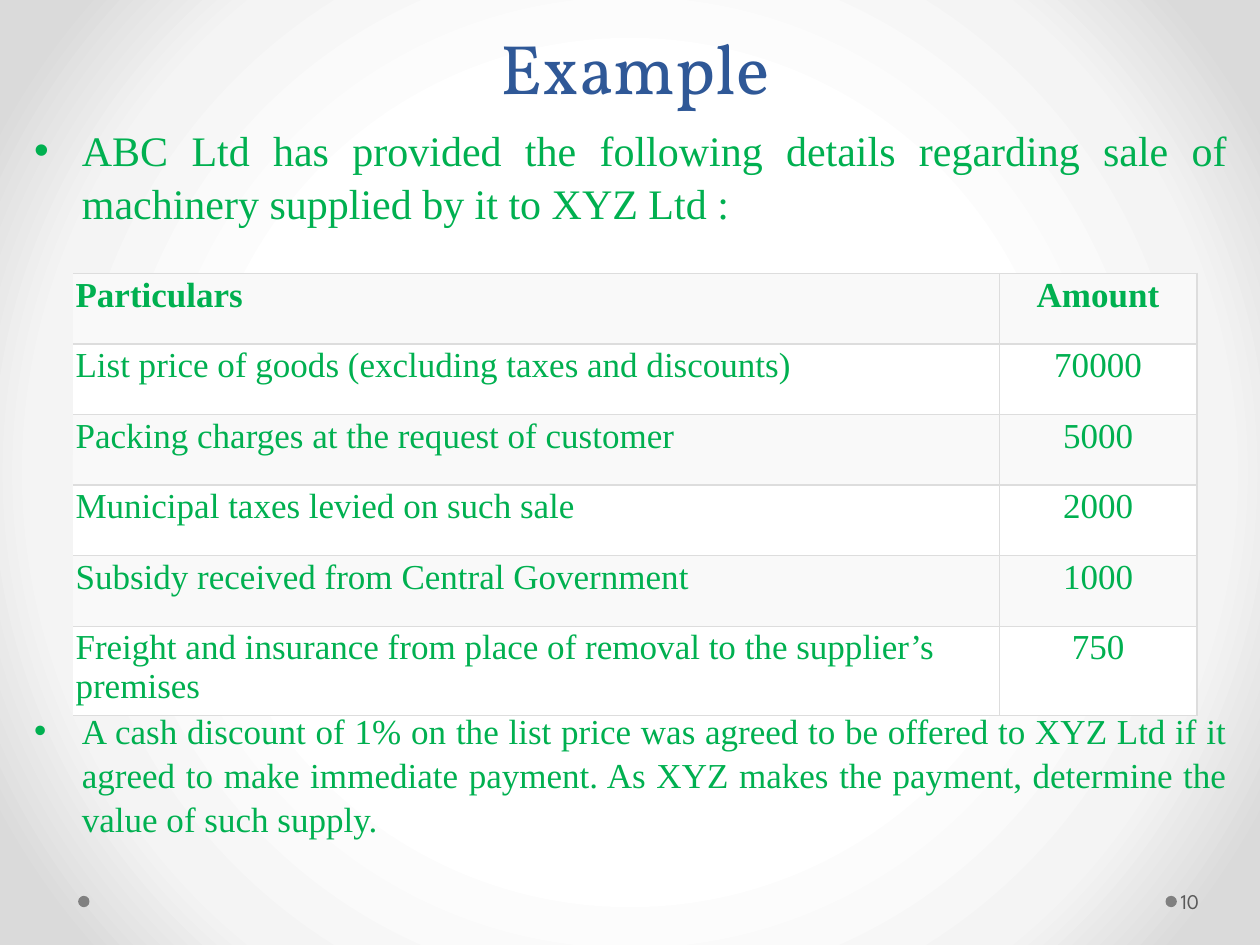
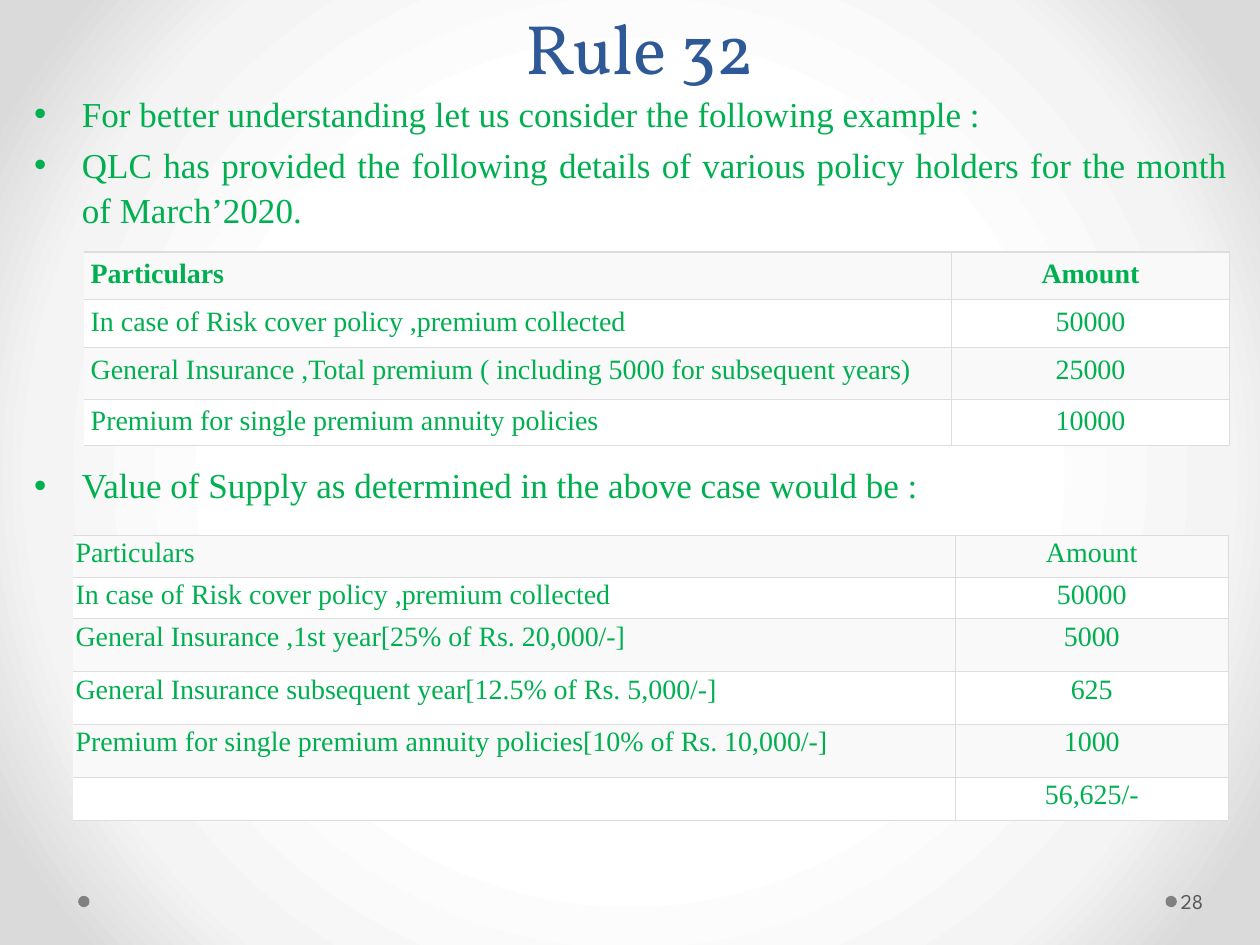
import lxml.etree
import pptx
import pptx.dml.color
import pptx.enum.dml
import pptx.enum.shapes
import pptx.enum.text
import pptx.oxml
import pptx.oxml.ns
import pptx.util

Inches = pptx.util.Inches
Pt = pptx.util.Pt
ALIGN = pptx.enum.text.PP_ALIGN
ANCHOR = pptx.enum.text.MSO_ANCHOR
NAMESPACE = pptx.oxml.ns.nsdecls("a")

BLUE, GREEN, GREY, DOT = "2F5897", "00B050", "595959", "808080"
BORDER = "DDDDDD"
BANDS = ["F9F9F9", "FFFFFF"]
BACKDROP = [(50, "FFFFFF"), (76, "F4F4F4"), (92, "DADADA")]

TITLE_FONT = {"name": "Vollkorn", "size": Pt(40)}
NUMBER_FONT = {"name": "League Spartan", "size": Pt(12)}
BODY_FACE = "Times New Roman"


def color(hex_value):
    return pptx.dml.color.RGBColor.from_string(hex_value)


def set_values(target, values):
    for name, value in values.items():
        setattr(target, name, value)


class Deck:
    """Holds the shared style and the slide being built."""

    def __init__(self):
        self.presentation = pptx.Presentation()
        set_values(self.presentation, {
            "slide_width": Inches(10), "slide_height": Inches(7.5)})
        self.slide = None
        self.set_backdrop()

    def set_backdrop(self):
        master = self.presentation.slide_master
        master.background.fill.gradient()
        old_fill = master.element.find(".//" + pptx.oxml.ns.qn("a:gradFill"))
        stops = "".join(
            f'<a:gs pos="{position * 1000}"><a:srgbClr val="{value}"/></a:gs>'
            for position, value in BACKDROP)
        new_fill = pptx.oxml.parse_xml(
            f'<a:gradFill {NAMESPACE} rotWithShape="1"><a:gsLst>{stops}</a:gsLst>'
            '<a:path path="circle"><a:fillToRect l="50000" t="50000" '
            'r="50000" b="50000"/></a:path></a:gradFill>')
        old_fill.getparent().replace(old_fill, new_fill)

    def add_slide(self, number):
        layout = self.presentation.slide_layouts[1]
        self.slide = self.presentation.slides.add_slide(layout)
        for left in (9.25, 0.62):
            self.dot(left)
        self.number(number)

    def place(self, shape, box):
        names = ("left", "top", "width", "height")
        set_values(shape, dict(zip(names, map(Inches, box))))

    def add_text(self, paragraph, text, font, text_color):
        run = paragraph.add_run()
        run.text = text
        set_values(run.font, font)
        run.font.color.rgb = color(text_color)

    def dot(self, left):
        shape = self.slide.shapes.add_shape(
            pptx.enum.shapes.MSO_SHAPE.OVAL,
            Inches(left), Inches(7.11), Inches(0.09), Inches(0.09))
        shape.shadow.inherit = False
        shape.fill.solid()
        shape.fill.fore_color.rgb = color(DOT)
        shape.line.fill.background()

    def number(self, number):
        box = self.slide.shapes.add_textbox(
            Inches(9.34), Inches(6.95), Inches(0.61), Inches(0.4))
        inset = Inches(0.05)
        set_values(box.text_frame, {
            "word_wrap": True, "vertical_anchor": ANCHOR.MIDDLE,
            "margin_left": Inches(0.03), "margin_right": inset,
            "margin_top": inset, "margin_bottom": inset})
        self.add_text(box.text_frame.paragraphs[0], str(number), NUMBER_FONT, GREY)

    def title(self, text, box):
        shape = self.slide.shapes.title
        self.place(shape, box)
        set_values(shape.text_frame, {
            "vertical_anchor": ANCHOR.BOTTOM,
            "auto_size": pptx.enum.text.MSO_AUTO_SIZE.NONE})
        paragraph = shape.text_frame.paragraphs[0]
        set_values(paragraph, {"alignment": ALIGN.CENTER, "line_spacing": Pt(58)})
        self.add_text(paragraph, text, TITLE_FONT, BLUE)

    def bullets(self, items, box):
        shape = self.slide.placeholders[1]
        self.place(shape, box)
        frame = shape.text_frame
        frame.auto_size = pptx.enum.text.MSO_AUTO_SIZE.NONE
        for index, (text, size, space_before) in enumerate(items):
            paragraph = frame.add_paragraph() if index else frame.paragraphs[0]
            set_values(paragraph, {
                "alignment": ALIGN.JUSTIFY, "line_spacing": 1.05,
                "space_before": Pt(space_before)})
            properties = paragraph._p.get_or_add_pPr()
            properties.set("marL", str(Inches(0.38)))
            properties.set("indent", str(-Inches(0.38)))
            self.add_text(paragraph, text, {"name": BODY_FACE, "size": Pt(size)}, GREEN)

    def borders(self, cell, visible):
        properties = cell._tc.get_or_add_tcPr()
        for side in "LRTB":
            line = lxml.etree.SubElement(
                properties, pptx.oxml.ns.qn(f"a:ln{side}"), w=str(Pt(0.75)))
            if side in visible:
                line.append(pptx.oxml.parse_xml(
                    f'<a:solidFill {NAMESPACE}><a:srgbClr val="{BORDER}"/></a:solidFill>'))
            else:
                lxml.etree.SubElement(line, pptx.oxml.ns.qn("a:noFill"))

    def table(self, rows, corner, widths, heights, size, inset, bold_header=True):
        left, top = corner
        table = self.slide.shapes.add_table(
            len(rows), len(widths), Inches(left), Inches(top),
            Inches(sum(widths)), Inches(sum(heights))).table
        set_values(table, {"first_row": False, "horz_banding": False})
        for column, width in zip(table.columns, widths):
            column.width = Inches(width)
        sides = ("margin_left", "margin_right", "margin_top", "margin_bottom")
        for row_index, texts in enumerate(rows):
            table.rows[row_index].height = Inches(heights[row_index])
            font = {"name": BODY_FACE, "size": Pt(size),
                    "bold": bold_header and row_index == 0}
            for column_index, text in enumerate(texts):
                cell = table.cell(row_index, column_index)
                set_values(cell, dict.fromkeys(sides, Inches(inset)))
                self.borders(cell, "LRTB" if column_index else "RTB")
                cell.fill.solid()
                cell.fill.fore_color.rgb = color(BANDS[row_index % 2])
                paragraph = cell.text_frame.paragraphs[0]
                paragraph.alignment = ALIGN.CENTER if column_index else ALIGN.LEFT
                self.add_text(paragraph, text, font, GREEN)


def build_example(deck):
    deck.add_slide(10)
    deck.title("Example", (0.25, 0.08, 9.58, 0.83))
    deck.bullets([
        ("ABC Ltd has provided the following details regarding sale of "
         "machinery supplied by it to XYZ Ltd :", 24, 4.8),
        ("A cash discount of 1% on the list price was agreed to be offered to "
         "XYZ Ltd if it agreed to make immediate payment. As XYZ makes the "
         "payment, determine the value of such supply.", 20, 274),
    ], (0.17, 0.92, 9.67, 6.17))
    deck.table([
        ("Particulars", "Amount"),
        ("List price of goods (excluding taxes and discounts)", "70000"),
        ("Packing charges at the request of customer", "5000"),
        ("Municipal taxes levied on such sale", "2000"),
        ("Subsidy received from Central Government", "1000"),
        ("Freight and insurance from place of removal to the supplier’s premises", "750"),
    ], (0.58, 2.17), (7.35, 1.57), [0.56] * 6, 20, 0.02)


def build_rule(deck):
    deck.add_slide(28)
    deck.title("Rule 32", (0.33, 0, 9.5, 0.75))
    deck.bullets([
        ("For better understanding let us consider the following example :", 20, 4),
        ("QLC has provided the following details of various policy holders "
         "for the month of March’2020.", 20, 4),
        ("Value of Supply as determined in the above case would be :", 20, 132.5),
    ], (0.17, 0.67, 9.67, 6.58))
    opening_rows = [
        ("Particulars", "Amount"),
        ("In case of Risk cover policy ,premium collected", "50000"),
    ]
    deck.table(opening_rows + [
        ("General Insurance ,Total premium ( including 5000 for subsequent years)", "25000"),
        ("Premium for single premium annuity policies", "10000"),
    ], (0.67, 2), (6.88, 2.21), (0.38, 0.38, 0.41, 0.33), 16, 0.05)
    deck.table(opening_rows + [
        ("General Insurance ,1st year[25% of Rs. 20,000/-]", "5000"),
        ("General Insurance subsequent year[12.5% of Rs. 5,000/-]", "625"),
        ("Premium for single premium annuity policies[10% of Rs. 10,000/-]", "1000"),
        ("", "56,625/-"),
    ], (0.58, 4.25), (7, 2.17), (0.33, 0.33, 0.42, 0.42, 0.42, 0.33), 16, 0.02,
        bold_header=False)


def main():
    deck = Deck()
    build_example(deck)
    build_rule(deck)
    deck.presentation.save("out.pptx")


if __name__ == "__main__":
    main()
